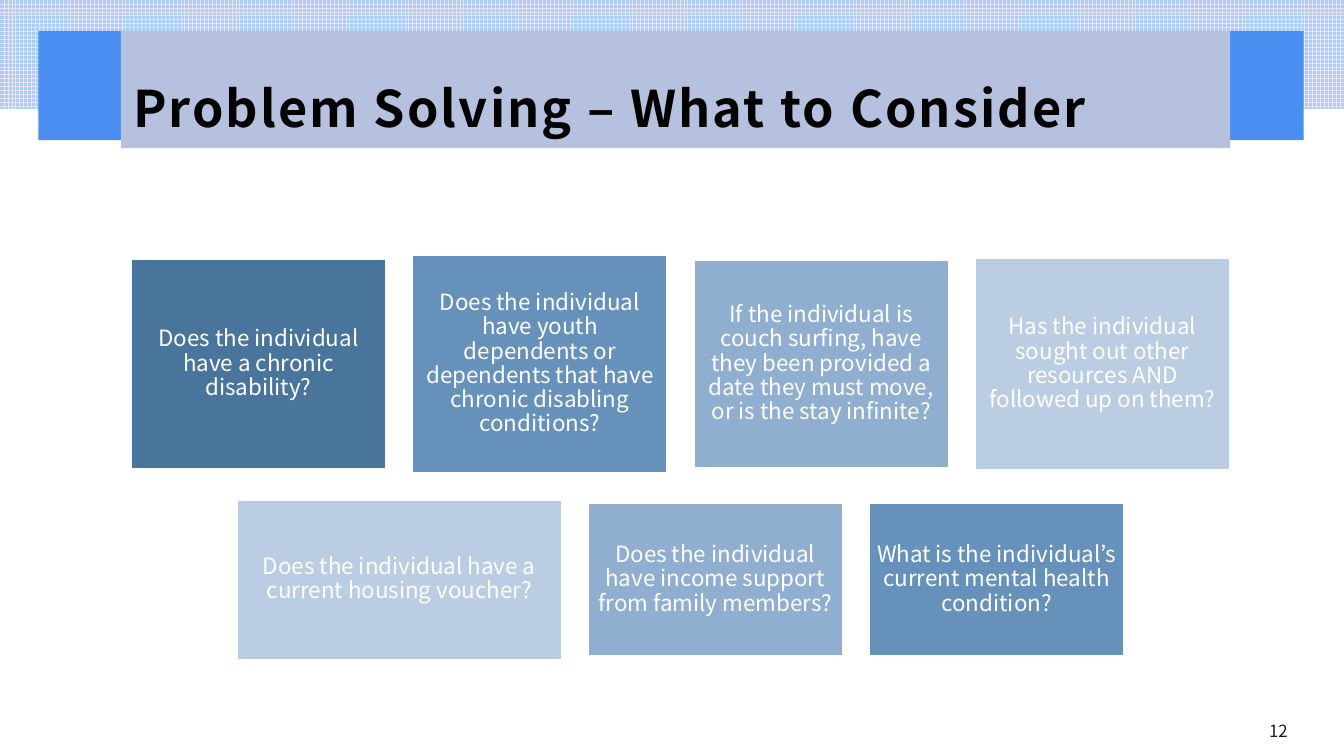
from pptx import Presentation
from pptx.dml.color import RGBColor
from pptx.enum.dml import MSO_PATTERN
from pptx.enum.shapes import MSO_SHAPE
from pptx.enum.text import MSO_ANCHOR, MSO_AUTO_SIZE, PP_ALIGN
from pptx.util import Inches, Pt

RECTANGLE = MSO_SHAPE.RECTANGLE
GRID = MSO_PATTERN.LARGE_GRID
MIDDLE, BOTTOM = MSO_ANCHOR.MIDDLE, MSO_ANCHOR.BOTTOM
LEFT, CENTER, RIGHT = PP_ALIGN.LEFT, PP_ALIGN.CENTER, PP_ALIGN.RIGHT
FONT = "Noto Sans CJK JP"
COLORS = {
    "grid_line": "E4E5F3", "grid_back": "ACCBF9", "band": "4A8EF2",
    "title_back": "B5C1DF", "black": "000000", "number": "1A1A1A",
    "white": "FFFFFF", "deep": "49749B", "strong": "6691BB",
    "medium": "8FAED0", "light": "BACDE3",
}


def rgb(name):
    return RGBColor.from_string(COLORS[name])


def write(shape, text, size=16, color="white", bold=False, align=CENTER,
          anchor=MIDDLE, inset=(0.07, 0.07, 0.07, 0.07), line_spacing=0.9,
          tracking=0):
    frame = shape.text_frame
    frame.word_wrap = True
    frame.auto_size = MSO_AUTO_SIZE.NONE
    frame.vertical_anchor = anchor
    (frame.margin_left, frame.margin_top,
     frame.margin_right, frame.margin_bottom) = map(Inches, inset)
    paragraph = frame.paragraphs[0]
    paragraph.alignment = align
    paragraph.line_spacing = line_spacing
    run = paragraph.add_run()
    run.text = text
    run.font.name = FONT
    run.font.size = Pt(size)
    run.font.bold = bold
    run.font.color.rgb = rgb(color)
    if tracking:
        run._r.get_or_add_rPr().set("spc", str(round(tracking * 100)))


prs = Presentation()
prs.slide_width, prs.slide_height = Inches(13.33), Inches(7.5)
slide = prs.slides.add_slide(prs.slide_layouts[5])
shapes = slide.shapes

# Header: grid strip and blue band
strip = shapes.add_shape(RECTANGLE, 0, 0, prs.slide_width, Inches(1.08))
strip.fill.patterned()
strip.fill.pattern = GRID
strip.fill.fore_color.rgb = rgb("grid_line")
strip.fill.back_color.rgb = rgb("grid_back")
band = shapes.add_shape(RECTANGLE, Inches(0.38), Inches(0.31),
                        Inches(12.55), Inches(1.08))
band.fill.solid()
band.fill.fore_color.rgb = rgb("band")
for header_part in (strip, band):
    header_part.line.fill.background()
    header_part.shadow.inherit = False

# Title, brought in front of the header
title = shapes.title
shapes.element.append(title.element)
title.left, title.top = Inches(1.2), Inches(0.31)
title.width, title.height = Inches(11), Inches(1.16)
title.fill.solid()
title.fill.fore_color.rgb = rgb("title_back")
write(title, "Problem Solving – What to Consider", size=36, color="black",
      bold=True, align=LEFT, anchor=BOTTOM, inset=(0.12, 0.12, 0.12, 0.1),
      tracking=1.5)

# Questions: each row is centred, with (text, color, width, height) per card
ROW_CENTER, GAP, CARD_WIDTH = 6.75, 0.26, 2.53
question_rows = [
    (3.61, [
        ("Does the individual have a chronic disability?",
         "deep", CARD_WIDTH, 2.08),
        ("Does the individual have youth dependents or dependents that have "
         "chronic disabling conditions?", "strong", CARD_WIDTH, 2.17),
        ("If the individual is couch surfing, have they been provided a date "
         "they must move, or is the stay infinite?",
         "medium", CARD_WIDTH, 2.06),
        ("Has the individual sought out other resources AND followed up on "
         "them?", "light", CARD_WIDTH, 2.11),
    ]),
    (5.75, [
        ("Does the individual have a current housing voucher?",
         "light", 3.22, 1.59),
        ("Does the individual have income support from family members?",
         "medium", CARD_WIDTH, 1.52),
        ("What is the individual’s current mental health condition?",
         "strong", CARD_WIDTH, 1.52),
    ]),
]
for middle, questions in question_rows:
    row_width = sum(q[2] for q in questions) + GAP * (len(questions) - 1)
    left = ROW_CENTER - row_width / 2
    for question, color, width, height in questions:
        card = shapes.add_shape(RECTANGLE, Inches(left),
                                Inches(middle - height / 2),
                                Inches(width), Inches(height))
        card.fill.solid()
        card.fill.fore_color.rgb = rgb(color)
        card.line.color.rgb = rgb("white")
        card.line.width = Pt(1.5)
        card.shadow.inherit = False
        write(card, question)
        left += width + GAP

# Slide number
page_number = shapes.add_textbox(Inches(12.02), Inches(7.05),
                                 Inches(0.85), Inches(0.4))
write(page_number, "12", size=12, color="number", align=RIGHT,
      inset=(0.1, 0.05, 0.1, 0.05), line_spacing=1.0)

prs.save("out.pptx")
